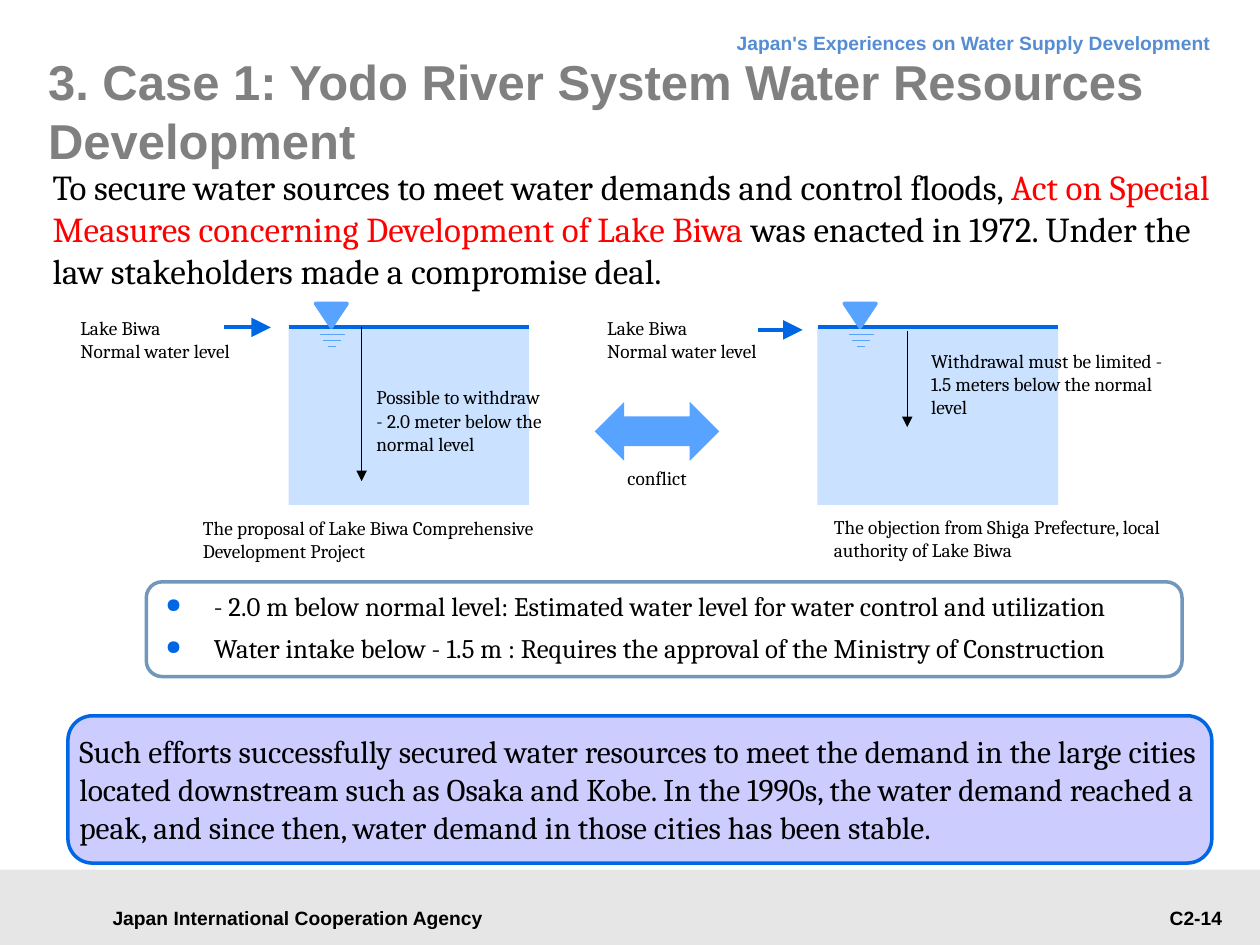
from lxml import etree
from pptx import Presentation
from pptx.dml.color import RGBColor
from pptx.enum import shapes, text
from pptx.oxml import ns
from pptx.util import Cm, Pt

THEME = dict(
    head="Arial", body="Cambria",
    ink="000000", red="FF0000", gray="808080", band="E6E6E6", sky="548DD4",
    blue="0067E4", wave="58A3FF", lake="CAE2FF", lilac="CCCCFF", steel="7197BD",
    small=11, list=15.3, close=18, lead=20, title=28,
)
LEFT, MID, RIGHT = text.PP_ALIGN.LEFT, text.PP_ALIGN.CENTER, text.PP_ALIGN.RIGHT
KIND = shapes.MSO_SHAPE
FLUSH = (0, 0, 0, 0)

# Boxes are (left, top, width, height) in centimetres.
TITLE = "3. Case 1: Yodo River System Water Resources Development"
FRAME = [
    ((1.8, 18.08, 8.41, 0.86), "Japan International Cooperation Agency", dict(align=MID, middle=True)),
    ((6.91, 0.33, 17.75, 0.97), "Japan's Experiences on Water Supply Development",
     dict(align=RIGHT, color="sky", pitch=18)),
    ((20.9, 18.14, 3.99, 0.74), "C2-14", dict(align=RIGHT)),
]
LEAD = [
    ("To secure water sources to meet water demands and control floods, ", "ink"),
    ("Act on Special Measures concerning Development of Lake Biwa ", "red"),
    ("was enacted in 1972. Under the law stakeholders made a compromise deal.", "ink"),
]
LEVEL = ["Lake Biwa", "Normal water level"]
LABELS = [
    ((1.37, 6.25, 4.8, 1.19), LEVEL),
    ((11.99, 6.25, 5.13, 1.19), LEVEL),
    ((7.34, 7.65, 4.22, 1.65), ["Possible to withdraw", "- 2.0 meter below the normal level"]),
    ((18.52, 6.91, 5.44, 1.65), ["Withdrawal must be limited - 1.5 meters below the normal level"]),
    ((12.4, 9.27, 1.85, 0.71), ["conflict"]),
    ((3.84, 10.29, 8.36, 1.19), ["The proposal of Lake Biwa Comprehensive Development Project"]),
    ((16.56, 10.26, 7.32, 1.19), ["The objection from Shiga Prefecture, local authority of Lake Biwa"]),
]
DEAL = [
    "- 2.0 m below normal level: Estimated water level for water control and utilization",
    "Water intake below - 1.5 m : Requires the approval of the Ministry of Construction",
]
CLOSE = ("Such efforts successfully secured water resources to meet the demand in the large cities "
         "located downstream such as Osaka and Kobe. In the 1990s, the water demand reached a peak, "
         "and since then, water demand in those cities has been stable.")

LAKES = [5.82, 16.48]
LAKE_W, LAKE_H, LAKE_Y = 4.85, 3.58, 6.6
WAVES = [(0.25, 0.15), (0.18, 0.26), (0.08, 0.38)]  # half width, depth
DEPTHS = [(7.29, 6.6, 9.7), (18.29, 6.68, 8.61)]    # x, top, bottom
POINTS = [(4.52, 5.46, 6.6), (15.29, 16.18, 6.65)]  # start, end, y


def rgb(name):
    return RGBColor.from_string(THEME[name])


def node(home, tag, **attrs):
    return etree.SubElement(home, ns.qn(tag), attrs)


def write(shape, paras, size="small", font="body", color="ink", bold=False, align=LEFT,
          middle=False, inset=None, pitch=None, gap=0, left=0, hang=0, bullet=False):
    """Fill a shape with paragraphs, each a string or a list of (text, colour)."""
    frame = shape.text_frame
    frame.word_wrap, frame.auto_size = True, text.MSO_AUTO_SIZE.NONE
    frame.vertical_anchor = text.MSO_ANCHOR.MIDDLE if middle else text.MSO_ANCHOR.TOP
    if inset:
        (frame.margin_left, frame.margin_top,
         frame.margin_right, frame.margin_bottom) = map(Cm, inset)
    for i, parts in enumerate(paras):
        para = frame.add_paragraph() if i else frame.paragraphs[0]
        props = para._p.get_or_add_pPr()
        if left:
            props.set("marL", str(Cm(left)))
            props.set("indent", str(Cm(hang)))
        if bullet:
            tint = node(props, "a:buClr")
            node(tint, "a:srgbClr", val=THEME["blue"])
            node(props, "a:buSzPct", val="75000")
            node(props, "a:buChar", char="●")
        para.alignment = align
        if pitch:
            para.line_spacing = Pt(pitch)
        if i and gap:
            para.space_before = Pt(gap)
        for words, tone in [(parts, color)] if isinstance(parts, str) else parts:
            run = para.add_run()
            run.text = words
            run.font.name, run.font.size = THEME[font], Pt(THEME[size])
            run.font.bold, run.font.color.rgb = bold, rgb(tone)


def label(slide, box, paras, **fmt):
    write(slide.shapes.add_textbox(*map(Cm, box)), paras, **fmt)


def block(slide, kind, box, fill=None, edge=None):
    shape = slide.shapes.add_shape(kind, *map(Cm, box))
    shape.shadow.inherit = False
    if fill:
        shape.fill.solid()
        shape.fill.fore_color.rgb = rgb(fill)
    else:
        shape.fill.background()
    if edge:
        shape.line.color.rgb, shape.line.width = rgb(edge), Pt(2)
    else:
        shape.line.fill.background()
    return shape


def line(slide, ends, color, width, head=None):
    """Draw a line; head is the arrowhead size, med or lg."""
    link = slide.shapes.add_connector(shapes.MSO_CONNECTOR.STRAIGHT, *map(Cm, ends))
    link.line.color.rgb, link.line.width = rgb(color), Pt(width)
    if head:
        node(link.line._get_or_add_ln(), "a:tailEnd", type="triangle", w=head, len=head)
    node(link._element.spPr, "a:effectLst")


def lake(slide, x):
    block(slide, KIND.RECTANGLE, (x, LAKE_Y, LAKE_W, LAKE_H), "lake")
    mid = x + 0.88
    for half, depth in WAVES:
        y = LAKE_Y + depth
        line(slide, (mid - half, y, mid + half, y), "wave", 0.75)
    line(slide, (x, LAKE_Y, x + LAKE_W, LAKE_Y), "blue", 2.25)
    mark = block(slide, KIND.ISOSCELES_TRIANGLE, (mid - 0.34, LAKE_Y - 0.48, 0.64, 0.48), "wave", "wave")
    mark._element.spPr.xfrm.set("flipV", "1")


def main():
    deck = Presentation()
    deck.slide_width, deck.slide_height = Cm(25.4), Cm(19.05)
    slide = deck.slides.add_slide(deck.slide_layouts[5])

    block(slide, KIND.RECTANGLE, (0, 17.53, 25.4, 1.52), "band")
    for box, words, fmt in FRAME:
        label(slide, box, [words], font="head", bold=True, **fmt)

    title = slide.shapes.title
    title.left, title.top, title.width, title.height = map(Cm, (0.97, 1.22, 24, 2.01))
    write(title, [TITLE], size="title", font="head", color="gray", bold=True,
          middle=True, inset=FLUSH)
    label(slide, (0.91, 3.33, 23.5, 2.57), [LEAD], size="lead", inset=FLUSH, left=0.15)

    for x in LAKES:
        lake(slide, x)
    for x, top, base in DEPTHS:
        line(slide, (x, top, x, base), "ink", 0.75, "med")
    for start, end, y in POINTS:
        line(slide, (start, y, end, y), "blue", 2.25, "lg")
    block(slide, KIND.LEFT_RIGHT_ARROW, (11.99, 8.1, 2.51, 1.19), "wave")
    for box, paras in LABELS:
        label(slide, box, paras)

    block(slide, KIND.ROUNDED_RECTANGLE, (2.95, 11.73, 20.88, 1.91), edge="steel")
    label(slide, (0.48, 11.91, 24.41, 1.8), DEAL, size="list", inset=(0.1, 0, 0, 0),
          pitch=18, gap=6, left=3.73, hang=-0.97, bullet=True)
    block(slide, KIND.ROUNDED_RECTANGLE, (1.37, 14.43, 23.06, 2.97), "lilac", "blue")
    label(slide, (1.45, 14.76, 22.96, 2.31), [CLOSE], size="close", inset=FLUSH, left=0.15)

    deck.save("out.pptx")


if __name__ == "__main__":
    main()
